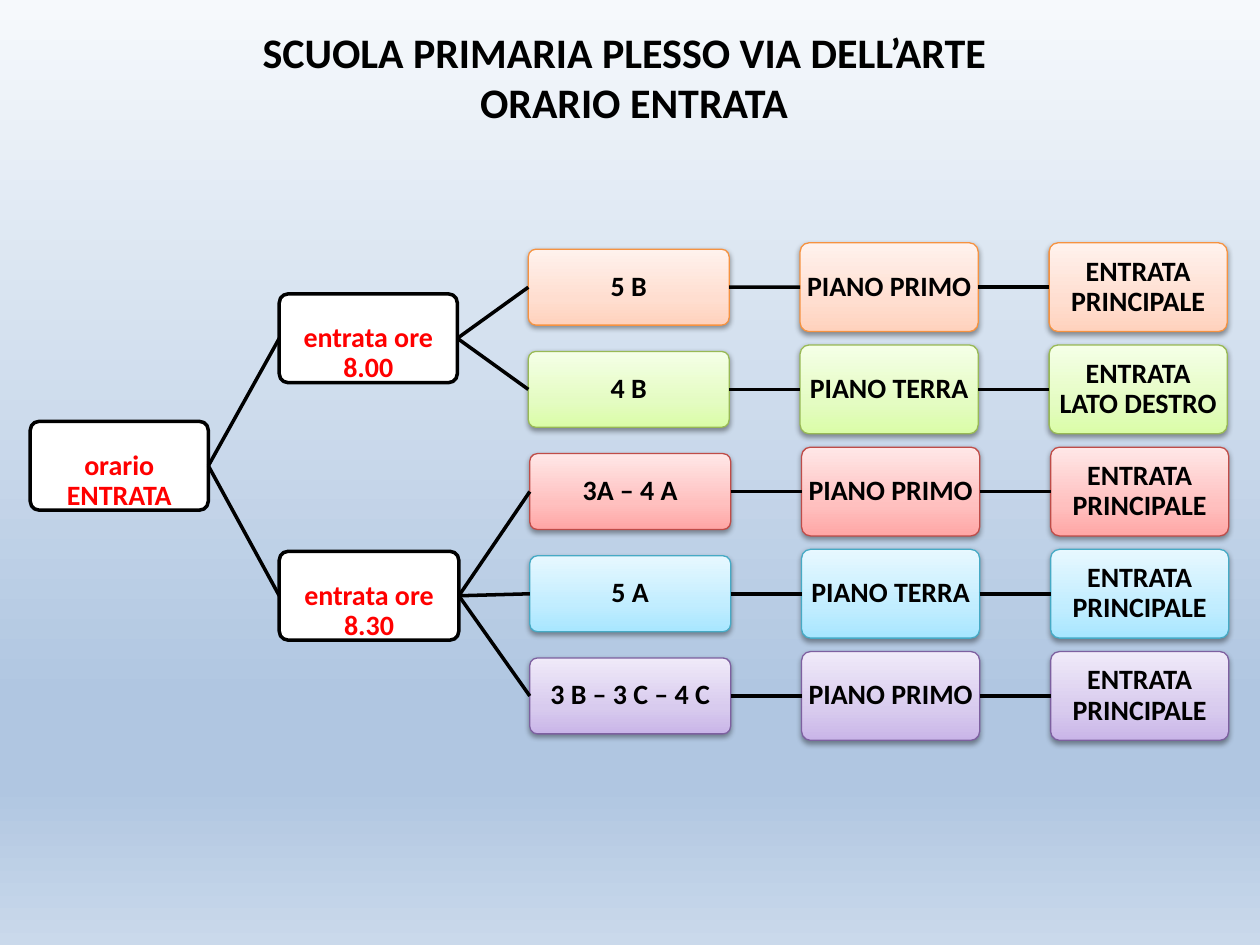
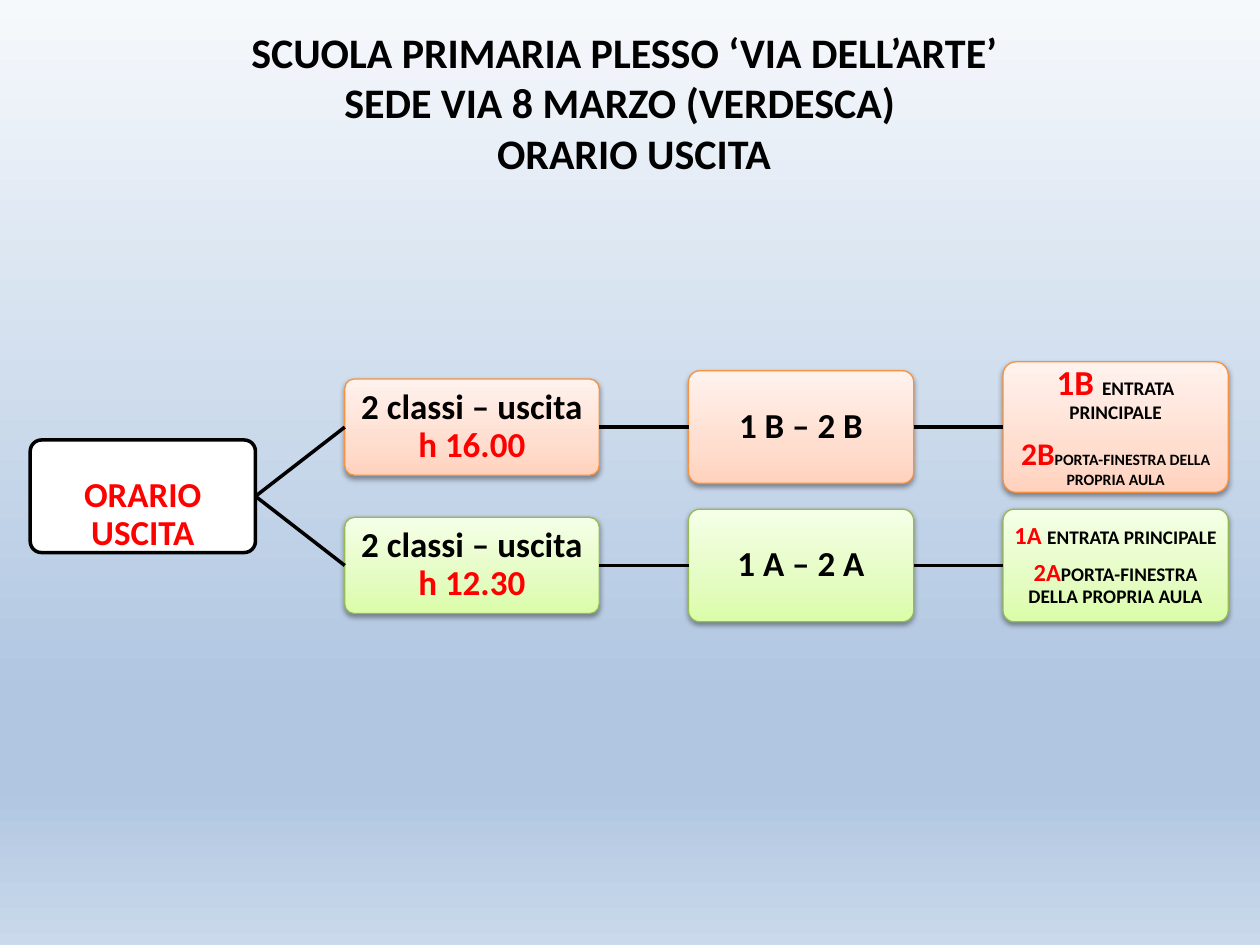
from copy import deepcopy
from lxml.etree import SubElement
from pptx import Presentation
from pptx.dml.color import RGBColor
from pptx.enum.shapes import MSO_CONNECTOR, MSO_SHAPE
from pptx.enum.text import MSO_ANCHOR, PP_ALIGN
from pptx.oxml.ns import qn
from pptx.util import Cm, Pt

FONT = "Calibri"
BLACK = RGBColor(0, 0, 0)
WHITE = RGBColor(255, 255, 255)
RED = RGBColor(255, 0, 0)
SKY = [(0, RGBColor(0xF6, 0xF9, 0xFC)), (0.74, RGBColor(0xB0, 0xC6, 0xE1)),
       (0.83, RGBColor(0xB0, 0xC6, 0xE1)), (1, RGBColor(0xCA, 0xD9, 0xEB))]

# Each tint: edge colour, then gradient from bottom to top
ORANGE = (RGBColor(0xF6, 0x92, 0x40), RGBColor(0xFF, 0xD2, 0xBD),
          RGBColor(0xFF, 0xDE, 0xD0), RGBColor(0xFF, 0xF2, 0xED))
GREEN = (RGBColor(0x98, 0xB9, 0x55), RGBColor(0xDA, 0xFD, 0xA7),
         RGBColor(0xE4, 0xFC, 0xC2), RGBColor(0xF5, 0xFF, 0xE7))
ROSE = (RGBColor(0xBF, 0x4C, 0x48), RGBColor(0xFF, 0xA6, 0xA5),
        RGBColor(0xFF, 0xC0, 0xBF), RGBColor(0xFF, 0xE7, 0xE7))
BLUE = (RGBColor(0x46, 0xAA, 0xC5), RGBColor(0xA7, 0xE6, 0xFF),
        RGBColor(0xC1, 0xED, 0xFF), RGBColor(0xE7, 0xF8, 0xFF))
VIOLET = (RGBColor(0x7D, 0x60, 0xA0), RGBColor(0xC9, 0xB5, 0xE8),
          RGBColor(0xD8, 0xCB, 0xEE), RGBColor(0xF0, 0xEA, 0xF9))

LEFT = 0.61  # left edge of both trees


def blend(fill, root, stops, angle):
    """Give a fill a linear gradient with any number of stops."""
    fill.gradient()
    fill.gradient_angle = angle
    items = next(root.iter(qn("a:gsLst")))
    for _ in stops[2:]:
        items.append(deepcopy(items[0]))
    for stop, (place, colour) in zip(fill.gradient_stops, stops):
        stop.position = place
        stop.color.rgb = colour


def node(slide, mid, size, paras, pad, tint=None, prior=None, gap=0):
    """Draw a tree box one gap right of its prior box, and join the two."""
    wide, high = size
    left = prior.left + prior.width + Cm(gap) if prior else Cm(LEFT)
    box = slide.shapes.add_shape(MSO_SHAPE.ROUNDED_RECTANGLE, left,
                                 Cm(mid - high / 2), Cm(wide), Cm(high))
    box.adjustments[0] = 0.1
    box.shadow.inherit = False
    if tint:
        edge, *shades = tint
        blend(box.fill, box._element, list(zip((0, 0.35, 1), shades)), 90)
        box.line.color.rgb = edge
        box.line.width = Pt(0.75)
        glow = SubElement(box._element.spPr.find(qn("a:effectLst")), qn("a:outerShdw"),
                          blurRad="40000", dist="20000", dir="5400000", rotWithShape="0")
        shade = SubElement(glow, qn("a:srgbClr"), val="000000")
        SubElement(shade, qn("a:alpha"), val="38000")
    else:
        box.fill.solid()
        box.fill.fore_color.rgb = WHITE
        box.line.color.rgb = BLACK
        box.line.width = Pt(2)

    # Text: runs override the paragraph font only where they differ
    frame = box.text_frame
    frame.word_wrap = True
    frame.vertical_anchor = MSO_ANCHOR.MIDDLE
    frame.margin_left = frame.margin_right = Cm(pad)
    frame.margin_top = frame.margin_bottom = Cm(pad)
    for i, runs in enumerate(paras):
        para = frame.add_paragraph() if i else frame.paragraphs[0]
        _, base, hue = runs[0]
        para.alignment = PP_ALIGN.CENTER
        para.line_spacing = 0.9
        para.space_after = Pt(round(base * 0.4))
        para.font.name, para.font.bold = FONT, True
        para.font.size, para.font.color.rgb = Pt(base), hue
        for words, points, colour in runs:
            run = para.add_run()
            run.text = words
            if points != base:
                run.font.size = Pt(points)
            if colour != hue:
                run.font.color.rgb = colour
    if not tint:
        # White boxes keep one line free above their text
        frame.margin_top = Cm(pad) + Pt(base * 1.1)

    if prior:
        link = slide.shapes.add_connector(MSO_CONNECTOR.STRAIGHT, 0, 0, 0, 0)
        link.begin_connect(prior, 3)
        link.end_connect(box, 1)
        link.line.color.rgb = BLACK
        link.line.width = Pt(2)
        SubElement(link._element.spPr, qn("a:effectLst"))
    return box


# Deck with a shared background
deck = Presentation()
deck.slide_width, deck.slide_height = Cm(25.4), Cm(19.05)
master = deck.slide_master
blend(master.background.fill, master.element, SKY, 270)

# Slides with their titles
TITLES = [
    ["SCUOLA PRIMARIA PLESSO VIA DELL’ARTE ", " ORARIO ENTRATA"],
    ["SCUOLA PRIMARIA PLESSO ‘VIA DELL’ARTE’ ",
     "SEDE VIA 8 MARZO (VERDESCA)  ", " ORARIO USCITA"],
]
pages = []
for lines in TITLES:
    page = deck.slides.add_slide(deck.slide_layouts[6])
    title = page.shapes.add_textbox(Cm(1.09), Cm(0.41), Cm(23.19), Cm(0.3 + len(lines)))
    title.text_frame.word_wrap = True
    for i, line in enumerate(lines):
        para = title.text_frame.add_paragraph() if i else title.text_frame.paragraphs[0]
        para.text = line
        para.alignment = PP_ALIGN.CENTER
        para.font.name, para.font.bold = FONT, True
        para.font.size, para.font.color.rgb = Pt(24), BLACK
    pages.append(page)
entry, leave = pages

# Entry tree: time, then class, floor and door in each row
PAD, GAP, TOP, STEP = 0.08, 1.43, 5.79, 2.06
CARD, SLIM = (3.59, 1.79), (4.05, 1.53)
DOOR = "ENTRATA PRINCIPALE"
TIMES = [
    ("entrata ore 8.00", 6.82, 3.59, [
        ("5 B", "PIANO PRIMO", DOOR, ORANGE),
        ("4 B", "PIANO TERRA", "ENTRATA LATO DESTRO", GREEN)]),
    ("entrata ore 8.30", 12.01, 3.62, [
        ("3A – 4 A", "PIANO PRIMO", DOOR, ROSE),
        ("5 A", "PIANO TERRA", DOOR, BLUE),
        ("3 B – 3 C – 4 C", "PIANO PRIMO", DOOR, VIOLET)]),
]
root = node(entry, 9.39, CARD, [[("orario ENTRATA", 16, RED)]], PAD)
mid = TOP
for label, place, wide, rows in TIMES:
    time = node(entry, place, (wide, CARD[1]), [[(label, 16, RED)]], PAD, None, root, GAP)
    for *cells, tint in rows:
        last = time
        for words, size in zip(cells, (SLIM, CARD, CARD)):
            last = node(entry, mid, size, [[(words, 16, BLACK)]], PAD, tint, last, GAP)
        mid += STEP

# Exit tree: time, classes and door in each row
PAD, GAP, TOP, STEP = 0.1, 1.8, 8.61, 2.79
CARD, SLIM = (4.54, 2.27), (5.13, 1.94)
EXITS = [
    ("h 16.00", "1 B – 2 B", 2.63, ORANGE, [
        [("1B ", 20, RED), ("ENTRATA", 11, BLACK), (" ", 20, BLACK),
         ("PRINCIPALE", 11, BLACK)],
        [("2B", 18, RED), ("PORTA-FINESTRA DELLA PROPRIA AULA", 9, BLACK)]]),
    ("h 12.30", "1 A – 2 A", 2.27, GREEN, [
        [("1A ", 14, RED), ("ENTRATA PRINCIPALE", 11, BLACK)],
        [("2A", 14, RED), ("PORTA-FINESTRA DELLA PROPRIA AULA", 11, BLACK)]]),
]
root = node(leave, TOP + STEP / 2, CARD, [[("ORARIO USCITA", 20, RED)]], PAD)
for i, (hour, group, high, tint, doors) in enumerate(EXITS):
    last = root
    for size, paras in [
        (SLIM, [[("2 classi – uscita ", 20, BLACK), (hour, 20, RED)]]),
        (CARD, [[(group, 20, BLACK)]]),
        ((CARD[0], high), doors),
    ]:
        last = node(leave, TOP + i * STEP, size, paras, PAD, tint, last, GAP)

deck.save("out.pptx")
